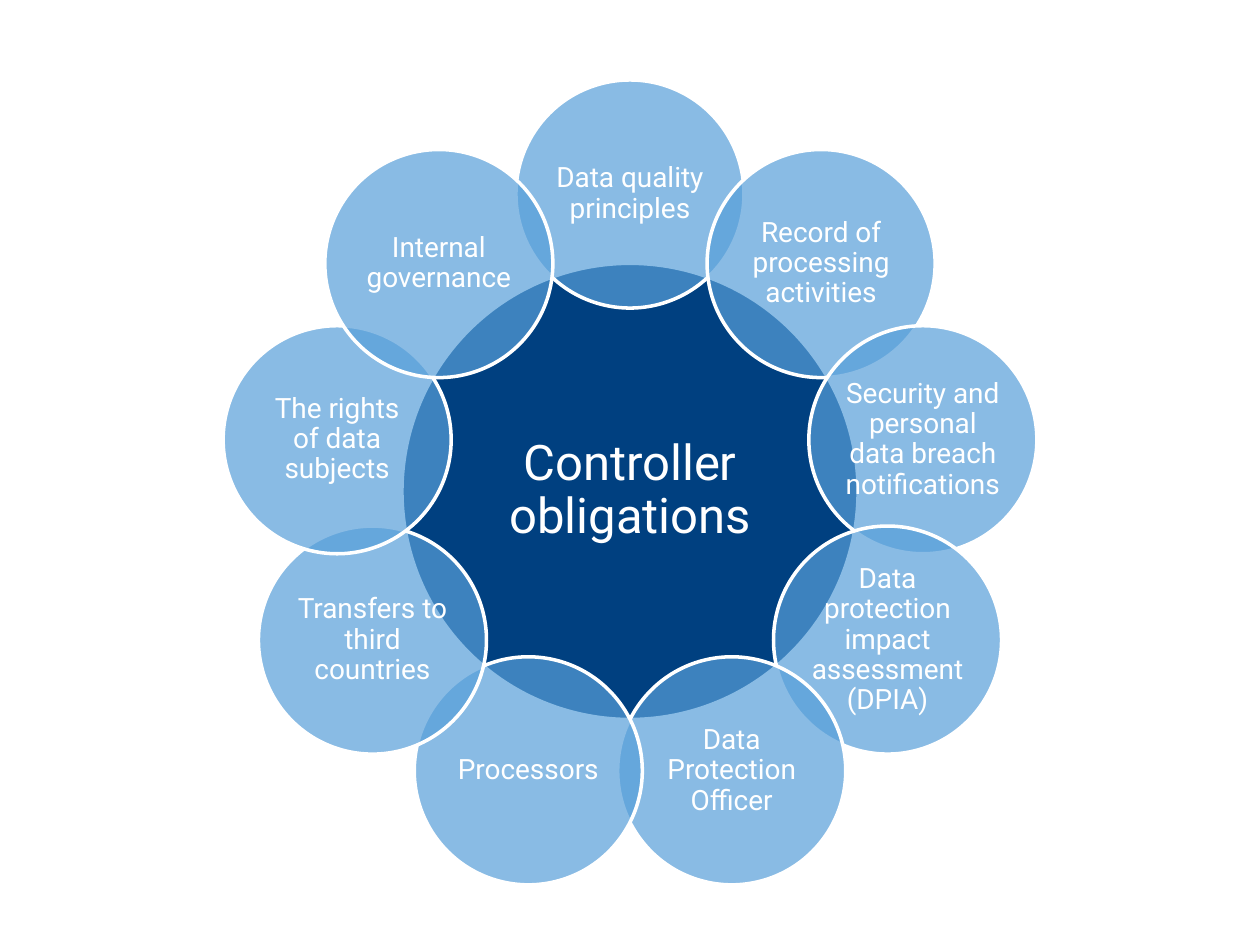
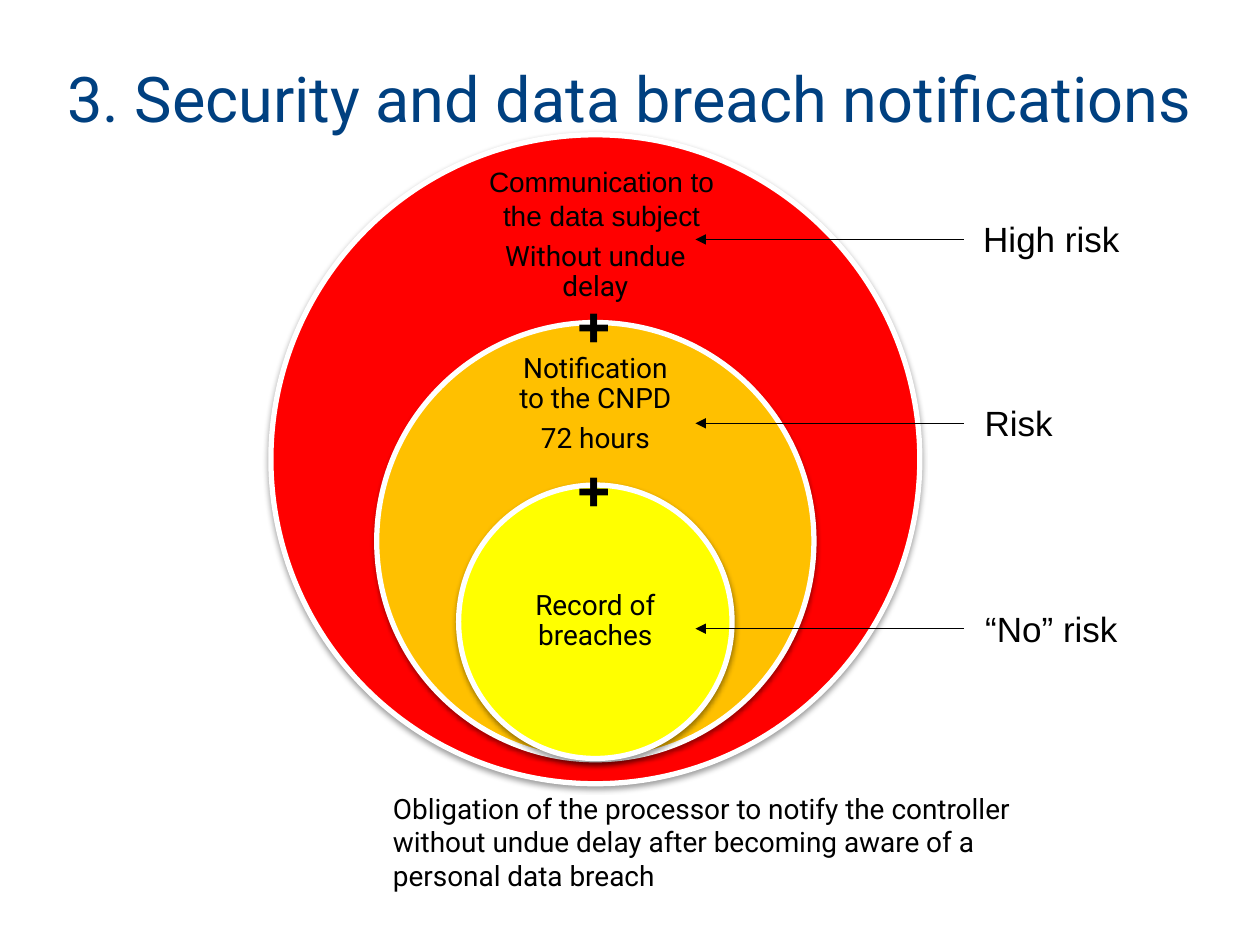
from math import cos, radians, sin

from lxml import etree
from pptx import Presentation
from pptx.dml.color import RGBColor
from pptx.enum.shapes import MSO_CONNECTOR, MSO_SHAPE
from pptx.enum.text import MSO_ANCHOR, MSO_AUTO_SIZE, PP_ALIGN
from pptx.oxml.ns import qn
from pptx.util import Inches, Pt

OVAL = MSO_SHAPE.OVAL
STRAIGHT = MSO_CONNECTOR.STRAIGHT
MIDDLE, TOP = MSO_ANCHOR.MIDDLE, MSO_ANCHOR.TOP
CENTER, LEFT = PP_ALIGN.CENTER, PP_ALIGN.LEFT
NO_FIT = MSO_AUTO_SIZE.NONE

NAVY = RGBColor(0x00, 0x40, 0x80)
SKY = RGBColor(0x57, 0x9F, 0xD9)
WHITE = RGBColor(0xFF, 0xFF, 0xFF)
BLACK = RGBColor(0x00, 0x00, 0x00)
RED = RGBColor(0xFF, 0x00, 0x00)
AMBER = RGBColor(0xFF, 0xC0, 0x00)
YELLOW = RGBColor(0xFF, 0xFF, 0x00)

MAIN, SANS, SERIF = "Roboto", "Arial", "Cambria"

PETALS = [
    "Data quality principles",
    "Record of processing activities",
    "Security and personal data breach notifications",
    "Data protection impact assessment (DPIA)",
    "Data Protection Officer",
    "Processors",
    "Transfers to third countries",
    "The rights of data subjects",
    "Internal governance",
]

# Diameter, bottom and fill, from the outside in
RINGS = [(5.15, 5.15, RED), (3.47, 4.96, AMBER), (2.17, 4.95, YELLOW)]
# Text, arrow height and label left, relative to the ring box
RISKS = [("High risk", 0.83, 5.18), ("Risk", 2.29, 4.92),
         ("“No” risk", 3.92, 5.18)]


def write(frame, text, size, color, font=MAIN, align=CENTER, anchor=MIDDLE,
          inset=None, tight=True, bold=False):
    """Fill a text frame; tight lines have a gap between paragraphs."""
    frame.text = text
    frame.word_wrap = True
    frame.auto_size = NO_FIT
    frame.vertical_anchor = anchor
    if inset is not None:
        frame.margin_left = frame.margin_right = Inches(inset)
        frame.margin_top = frame.margin_bottom = Inches(inset)
    for i, par in enumerate(frame.paragraphs):
        par.alignment = align
        if tight:
            par.line_spacing = 0.9
        if i:
            par.space_before = Pt(5.6)
        for run in par.runs:
            run.font.name, run.font.size = font, Pt(size)
            run.font.bold = bold
            run.font.color.rgb = color


def note(slide, box, text, size, **style):
    shape = slide.shapes.add_textbox(*map(Inches, box))
    write(shape.text_frame, text, size, BLACK, **style)


def disc(slide, x, y, size, fill, width):
    """Add a white-edged circle centred on x, y."""
    shape = slide.shapes.add_shape(OVAL, Inches(x - size / 2),
                                   Inches(y - size / 2),
                                   Inches(size), Inches(size))
    shape.shadow.inherit = False
    shape.fill.solid()
    shape.fill.fore_color.rgb = fill
    shape.line.color.rgb = WHITE
    shape.line.width = Pt(width)
    return shape


def fade(shape, percent):
    color = shape.fill._xPr.find(qn("a:solidFill"))[0]
    etree.SubElement(color, qn("a:alpha"), val=str(percent * 1000))


def shade(shape):
    """Give a shape a soft shadow straight below it."""
    effects = shape._element.spPr.find(qn("a:effectLst"))
    shadow = etree.SubElement(effects, qn("a:outerShdw"),
                              blurRad=str(Pt(3.1)), dist=str(Pt(1.6)),
                              dir="5400000", rotWithShape="0")
    color = etree.SubElement(shadow, qn("a:srgbClr"), val=str(BLACK))
    etree.SubElement(color, qn("a:alpha"), val="38000")


def arrow(slide, start, end, y):
    line = slide.shapes.add_connector(STRAIGHT, Inches(start), Inches(y),
                                      Inches(end), Inches(y))
    line.line.color.rgb = BLACK
    line.line.width = Pt(0.75)
    etree.SubElement(line.line._get_or_add_ln(), qn("a:tailEnd"),
                     type="triangle")
    etree.SubElement(line._element.spPr, qn("a:effectLst"))


def flower(slide, x, y):
    """Draw the hub at x, y with its petals, clockwise from the top."""
    hub = disc(slide, x, y, 3.62, NAVY, 2)
    write(hub.text_frame, "Controller obligations", 28, WHITE, inset=0.04)
    reach, step = 2.36, 360 / len(PETALS)
    for i, text in enumerate(PETALS):
        turn = radians(i * step)
        petal = disc(slide, x + reach * sin(turn), y - reach * cos(turn),
                     1.81, SKY, 2)
        fade(petal, 70)
        write(petal.text_frame, text, 16, WHITE, inset=0.02)


def heading(slide, text, box):
    title = slide.shapes.title
    title.left, title.top, title.width, title.height = map(Inches, box)
    write(title.text_frame, text, 36, NAVY, tight=False)


def rings(slide, x, y):
    """Draw the nested rings and their texts in the box at x, y."""
    mid = x + RINGS[0][0] / 2
    for size, bottom, fill in RINGS:
        shade(disc(slide, mid, y + bottom - size / 2, size, fill, 3))
    note(slide, (x + 1.61, y + 0.19, 2.03, 0.64),
         "Communication to the data subject", 16, font=SANS, anchor=TOP,
         tight=False)
    for text, top, width, height in [
            ("Without undue delay", 0.72, 1.8, 0.74),
            ("Notification to the CNPD\n72 hours", 1.69, 1.62, 0.9),
            ("Record of breaches", 3.32, 1.53, 1.08)]:
        note(slide, (mid - width / 2, y + top, width, height), text, 16,
             inset=0.12)
    for top in (1.09, 2.39):
        note(slide, (x + 2.3, y + top, 0.65, 0.77), "+", 40, font=SERIF,
             align=LEFT, anchor=TOP, tight=False, bold=True)


def risks(slide, x, y):
    """Point from each risk level to its ring; x, y as for the rings."""
    for text, level, left in RISKS:
        arrow(slide, x + 5.5, x + 3.37, y + level)
        note(slide, (x + left, y + level - 0.22, 2.03, 0.44), text, 20,
             font=SANS, anchor=TOP, tight=False)


def duties(deck):
    slide = deck.slides.add_slide(deck.slide_layouts[6])
    flower(slide, 5, 3.9)


def breaches(deck):
    slide = deck.slides.add_slide(deck.slide_layouts[5])
    heading(slide, "3. Security and data breach notifications",
            (0.35, 0.32, 9.29, 0.91))
    rings(slide, 2.15, 1.07)
    note(slide, (3.02, 6.23, 5.39, 0.91),
         "Obligation of the processor to notify the controller without "
         "undue delay after becoming aware of a personal data breach",
         16, align=LEFT, anchor=TOP, tight=False)
    risks(slide, 2.15, 1.07)


def main():
    deck = Presentation()
    deck.slide_width, deck.slide_height = Inches(10), Inches(7.5)
    duties(deck)
    breaches(deck)
    deck.save("out.pptx")


if __name__ == "__main__":
    main()
